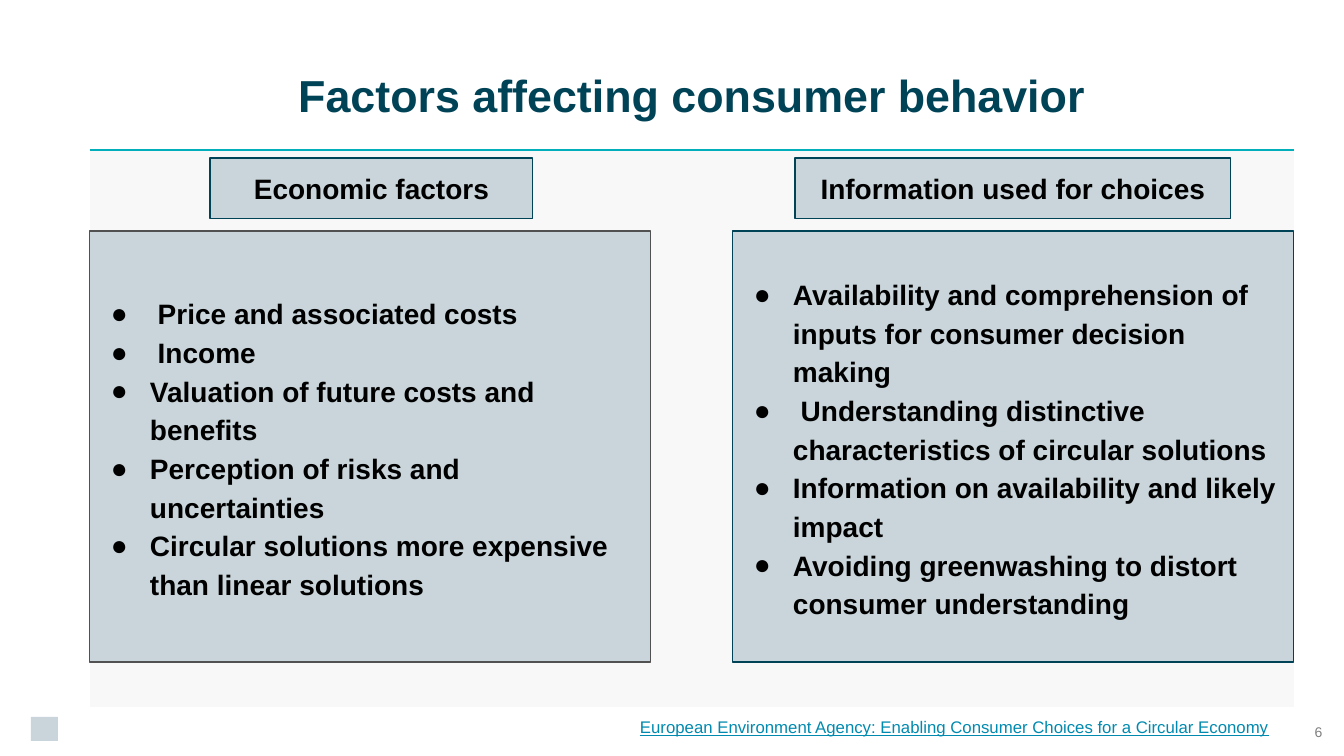
"""Build the slide on factors affecting consumer behavior."""
from dataclasses import dataclass

import pptx
import pptx.dml.color
import pptx.enum.shapes
import pptx.enum.text
import pptx.oxml
import pptx.oxml.ns
import pptx.util
from lxml import etree

WIDE, HIGH = 1344, 756
SCALE = 12192000 / WIDE
LEFT, SPAN = 90, 1204
COLORS = {
    "ink": "000000",
    "teal": "004357",
    "rule": "00AFBA",
    "tile": "C9D5DA",
    "panel": "F2F2F2",
    "edge": "515151",
    "link": "008AAF",
    "page": "7F7F7F",
}
ALIGN = pptx.enum.text.PP_ALIGN
ANCHOR = pptx.enum.text.MSO_ANCHOR


@dataclass
class Box:
    left: int
    top: int
    width: int
    height: int


@dataclass
class Style:
    size: int
    color: str = "ink"
    bold: bool = False
    line: bool = False
    align: ALIGN = ALIGN.CENTER
    anchor: ANCHOR = ANCHOR.MIDDLE
    inset: int = 0


@dataclass
class Factor:
    title: str
    head: int
    width: int
    left: int
    edge: str
    items: tuple[str, ...]


FACTORS = [
    Factor("Economic factors", 210, 323, LEFT, "edge", (
        " Price and associated costs",
        " Income",
        "Valuation of future costs and benefits",
        "Perception of risks and uncertainties",
        "Circular solutions more expensive than linear solutions",
    )),
    Factor("Information used for choices", 795, 436, 733, "teal", (
        "Availability and comprehension of inputs for consumer decision making",
        " Understanding distinctive characteristics of circular solutions",
        "Information on availability and likely impact",
        "Avoiding greenwashing to distort consumer understanding",
    )),
]
HEAD = Style(20, bold=True, inset=10)
LIST = Style(20, bold=True, inset=10, align=ALIGN.LEFT)


def px(value: int) -> int:
    return round(value * SCALE)


def place(box: Box) -> tuple[int, ...]:
    return tuple(px(n) for n in (box.left, box.top, box.width, box.height))


def paint(name: str) -> pptx.dml.color.RGBColor:
    return pptx.dml.color.RGBColor.from_string(COLORS[name])


def write(shape, text: str, style: Style) -> None:
    frame = shape.text_frame
    frame.text = text
    frame.word_wrap = True
    frame.vertical_anchor = style.anchor
    frame.margin_left = frame.margin_right = px(style.inset)
    frame.margin_top = frame.margin_bottom = px(style.inset)
    for para in frame.paragraphs:
        para.alignment = style.align
        for run in para.runs:
            font = run.font
            font.name = "Arial"
            font.size = pptx.util.Pt(style.size)
            font.bold = style.bold
            font.underline = style.line
            font.color.rgb = paint(style.color)


def label(slide, box: Box, text: str, style: Style):
    shape = slide.shapes.add_textbox(*place(box))
    write(shape, text, style)
    return shape


def tile(slide, box: Box, fill: str, edge: str | None = None):
    kind = pptx.enum.shapes.MSO_SHAPE.RECTANGLE
    shape = slide.shapes.add_shape(kind, *place(box))
    shape.shadow.inherit = False
    shape.fill.solid()
    shape.fill.fore_color.rgb = paint(fill)
    if edge:
        shape.line.color.rgb = paint(edge)
        shape.line.width = pptx.util.Pt(0.75)
    else:
        shape.line.fill.background()
    return shape


def add(root, tag: str, **attrs: str):
    return etree.SubElement(root, pptx.oxml.ns.qn(tag), **attrs)


def bullet(para) -> None:
    para.line_spacing = 1.15
    props = para._p.get_or_add_pPr()
    props.set("marL", str(px(50)))
    props.set("indent", str(px(-39)))
    add(add(props, "a:buClr"), "a:srgbClr", val=COLORS["ink"])
    add(props, "a:buFont", typeface="Arial")
    add(props, "a:buChar", char="●")


def frame(slide) -> None:
    tile(slide, Box(31, 717, 27, 24), "tile")
    panel = tile(slide, Box(LEFT, 150, SPAN, 557), "panel")
    tint = next(panel._element.spPr.iter(pptx.oxml.ns.qn("a:srgbClr")))
    add(tint, "a:alpha", val="49000")
    kind = pptx.enum.shapes.MSO_CONNECTOR.STRAIGHT
    ends = (px(n) for n in (LEFT, 150, LEFT + SPAN, 150))
    rule = slide.shapes.add_connector(kind, *ends)
    rule.line.color.rgb = paint("rule")
    rule.line.width = pptx.util.Pt(2)
    add(rule._element.spPr, "a:effectLst")


def column(slide, factor: Factor) -> None:
    head = Box(factor.head, 158, factor.width, 61)
    write(tile(slide, head, "tile", "teal"), factor.title, HEAD)
    body = tile(slide, Box(factor.left, 231, 561, 431), "tile", factor.edge)
    write(body, "\n".join(factor.items), LIST)
    for para in body.text_frame.paragraphs:
        bullet(para)


def main() -> None:
    deck = pptx.Presentation()
    deck.slide_width, deck.slide_height = px(WIDE), px(HIGH)
    slide = deck.slides.add_slide(deck.slide_layouts[6])
    frame(slide)
    label(slide, Box(LEFT, 43, SPAN, 103),
          "Factors affecting consumer behavior", Style(32, "teal", bold=True))
    label(slide, Box(1294, 707, 49, 49), "6", Style(10, "page"))
    for factor in FACTORS:
        column(slide, factor)
    source = label(
        slide, Box(630, 707, 664, 40),
        "European Environment Agency: Enabling Consumer Choices for a Circular Economy",
        Style(12, "link", line=True, align=ALIGN.LEFT, anchor=ANCHOR.TOP, inset=10))
    source.text_frame.paragraphs[0].space_before = pptx.util.Pt(10)
    deck.save("out.pptx")


if __name__ == "__main__":
    main()
